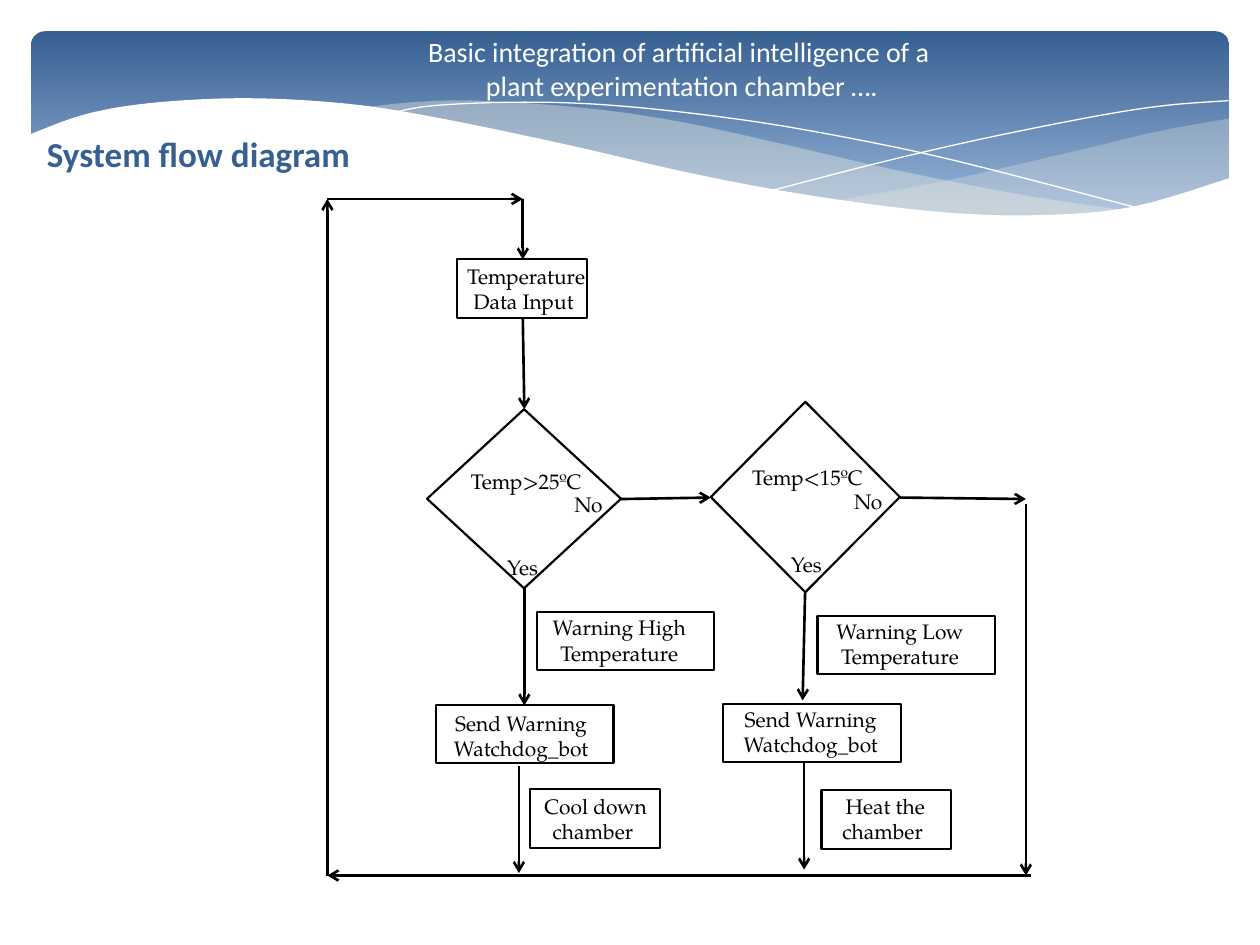
from lxml.etree import SubElement
from pptx import Presentation
from pptx.dml.color import RGBColor as Rgb
from pptx.enum.shapes import MSO_CONNECTOR as Link, MSO_SHAPE as Kind
from pptx.enum.text import MSO_ANCHOR as Anchor, MSO_AUTO_SIZE as Fit, PP_ALIGN as Align
from pptx.oxml.ns import qn
from pptx.util import Cm, Pt

HUES = {"navy": "376092", "sky": "95B3D7", "sand": "EEECE1",
        "white": "FFFFFF", "black": "000000"}
SANS, SERIF = "Calibri", "TeX Gyre Pagella"


def hue(name):
    return Rgb.from_string(HUES[name])


def write(frame, text, font=SERIF, size=12, color="black", bold=False, align=Align.CENTER):
    """Fill a text frame, one paragraph for each line of text."""
    frame.word_wrap = True
    frame.auto_size = Fit.NONE
    frame.vertical_anchor = Anchor.TOP
    frame.text = text
    for par in frame.paragraphs:
        par.alignment = align
        face = par.runs[0].font
        face.name, face.size, face.bold = font, Pt(size), bold
        face.color.rgb = hue(color)


def smooth(knots, steps=6):
    """Return points on a Catmull-Rom curve through the knots."""
    ends = [knots[0], *knots, knots[-1]]
    curve = [knots[0]]
    for a, b, c, d in zip(ends, ends[1:], ends[2:], ends[3:]):
        for n in range(1, steps + 1):
            t = n / steps
            curve.append(tuple(
                (2 * q + (r - p) * t + (2 * p - 5 * q + 4 * r - s) * t ** 2
                 + (3 * q - p - 3 * r + s) * t ** 3) / 2
                for p, q, r, s in zip(a, b, c, d)))
    return curve


class Board:
    """Holds the line style and the current slide."""

    edge, stroke = 1.25, 1.5

    def __init__(self, slide):
        self.slide, self.shapes = slide, slide.shapes

    def title(self, text, box, **look):
        head = self.shapes.title
        head.left, head.top, head.width, head.height = map(Cm, box)
        write(head.text_frame, text, **look)
        self.shapes._spTree.append(head._element)  # in front of the waves

    def text(self, text, box, **look):
        write(self.shapes.add_textbox(*map(Cm, box)).text_frame, text, **look)

    def band(self, box, curve):
        shape = self.shapes.add_shape(Kind.ROUNDED_RECTANGLE, *map(Cm, box))
        shape.adjustments[0] = curve
        shape.shadow.inherit = False
        shape.line.fill.background()
        shape.fill.gradient()
        shape.fill.gradient_angle = 270
        for stop, name, place in zip(shape.fill.gradient_stops, ("navy", "sky"), (0, 0.9)):
            stop.color.rgb, stop.position = hue(name), place

    def wave(self, points, fill=None, alpha=100):
        """Draw a filled wave, or a hairline when no fill is given."""
        first, *rest = [(Cm(x), Cm(y)) for x, y in points]
        pen = self.shapes.build_freeform(*first)
        pen.add_line_segments(rest, close=bool(fill))
        shape = pen.convert_to_shape()
        shape.shadow.inherit = False
        if fill:
            shape.line.fill.background()
            shape.fill.solid()
            shape.fill.fore_color.rgb = hue(fill)
            if alpha < 100:
                tone = shape._element.spPr.find(qn("a:solidFill"))[0]
                SubElement(tone, qn("a:alpha"), val=str(alpha * 1000))
        else:
            shape.fill.background()
            shape.line.color.rgb = hue("white")
            shape.line.width = Pt(0)

    def node(self, kind, box):
        shape = self.shapes.add_shape(kind, *map(Cm, box))
        shape.shadow.inherit = False
        shape.fill.background()
        shape.line.color.rgb = hue("black")
        shape.line.width = Pt(self.edge)

    def arrow(self, *ends):
        link = self.shapes.add_connector(Link.STRAIGHT, *map(Cm, ends))
        link.line.color.rgb = hue("black")
        link.line.width = Pt(self.stroke)
        SubElement(link.line._get_or_add_ln(), qn("a:tailEnd"), type="arrow")
        SubElement(link._element.spPr, qn("a:effectLst"))


def main():
    deck = Presentation()
    deck.slide_width, deck.slide_height = Cm(25.4), Cm(19.05)
    board = Board(deck.slides.add_slide(deck.slide_layouts[5]))

    # Header band with its waves
    board.band((0.63, 0.63, 24.15, 3.96), 0.07)
    board.wave(smooth([(24.79, 2.39), (23.39, 2.64), (21.87, 3), (19.13, 3.63), (16.79, 4.06)])
               + smooth([(16.79, 4.06), (18.59, 4.27), (20.4, 4.37), (22.15, 4.29),
                         (23.57, 4.01), (24.79, 3.58)]), "sand", 29)
    board.wave(smooth([(22.68, 4.24), (20.5, 3.91), (17.93, 3.4), (15.98, 2.95), (13.74, 2.46),
                       (11.81, 2.18), (9.65, 2.03), (8.33, 2.06), (7.26, 2.18)])
               + smooth([(7.26, 2.18), (9.19, 2.46), (11.4, 2.95), (14.38, 3.63), (16.51, 4.01),
                         (18.69, 4.29), (20.78, 4.39), (22.68, 4.24)]), "sand", 40)
    board.wave(smooth([(7.85, 2.29), (8.74, 2.13), (10.57, 2.06), (12.42, 2.13), (14.78, 2.39),
                       (16.89, 2.74), (19.3, 3.25), (23.04, 4.22)]))
    board.wave(smooth([(15.57, 3.84), (17.65, 3.3), (19.71, 2.82), (22, 2.36),
                       (23.47, 2.13), (24.77, 2.03)]))
    board.wave(smooth([(0.58, 2.72), (1.7, 2.31), (3.02, 2.08), (4.9, 1.98), (6.88, 2.08),
                       (8.64, 2.34), (11.35, 2.9), (14.1, 3.53), (16.46, 3.96), (18.9, 4.27),
                       (20.9, 4.34), (22.83, 4.17), (24.82, 3.58)])
               + [(24.82, 5.69), (0.58, 5.69)], "white")

    # Headings
    board.text("Basic integration of artificial intelligence of a\n"
               " plant experimentation chamber ….",
               (4.45, 0.58, 18.47, 1.63), font=SANS, size=16, color="white")
    board.title("System flow diagram", (0.69, 2.54, 21.82, 1.12), font=SANS, size=20,
                color="navy", bold=True, align=Align.LEFT)

    # Steps: text, corner of the box, corner of the text
    small, wide = (2.62, 1.19, 3.23), (3.58, 1.17, 3.33)
    steps = {
        small: [(" Temperature Data Input", (9.22, 5.23), (8.94, 5.18)),
                (" Cool down chamber", (10.69, 15.9), (10.34, 15.87)),
                (" Heat the chamber", (16.56, 15.92), (16.18, 15.87))],
        wide: [("Warning High Temperature", (10.82, 12.34), (10.82, 12.27)),
               ("Warning Low Temperature", (16.48, 12.42), (16.48, 12.34)),
               ("Send Warning Watchdog_bot", (8.79, 14.22), (8.84, 14.2)),
               ("Send Warning Watchdog_bot", (14.58, 14.2), (14.68, 14.12))],
    }
    for (width, height, span), items in steps.items():
        for text, spot, label in items:
            board.node(Kind.RECTANGLE, (*spot, width, height))
            board.text(text, (*label, span, 1.22))

    # Decisions: outline, question, corners of the question, yes and no
    tests = [
        ((8.61, 8.25, 3.91, 3.61), "Temp>25ºC", (8.94, 9.32), (9.75, 11.05), (11.23, 9.78)),
        ((14.33, 8.1, 3.81, 3.84), "Temp<15ºC", (14.61, 9.25), (15.47, 11), (16.87, 9.73)),
    ]
    for box, ask, *spots in tests:
        board.node(Kind.DIAMOND, box)
        for text, spot, span in zip((ask, "Yes", "No"), spots, (3.34, 1.57, 1.27)):
            board.text(text, (*spot, span, 0.74))

    # Arrows: main flow, branches, then the return loop
    left, right, top, base = 6.6, 20.68, 4.01, 17.65
    for ends in [
        (10.54, top, 10.54, 5.23), (10.54, 6.43, 10.57, 8.25),
        (10.57, 11.86, 10.57, 14.22), (10.46, 15.44, 10.46, 17.6),
        (12.52, 10.06, 14.33, 10.03), (18.14, 10.03, right, 10.06),
        (16.23, 11.94, 16.18, 14.12), (16.21, 15.37, 16.21, 17.53),
        (right, 10.16, right, base), (20.78, base, left, base),
        (left, base, left, top), (left, top, 10.54, top),
    ]:
        board.arrow(*ends)

    deck.save("out.pptx")


if __name__ == "__main__":
    main()
